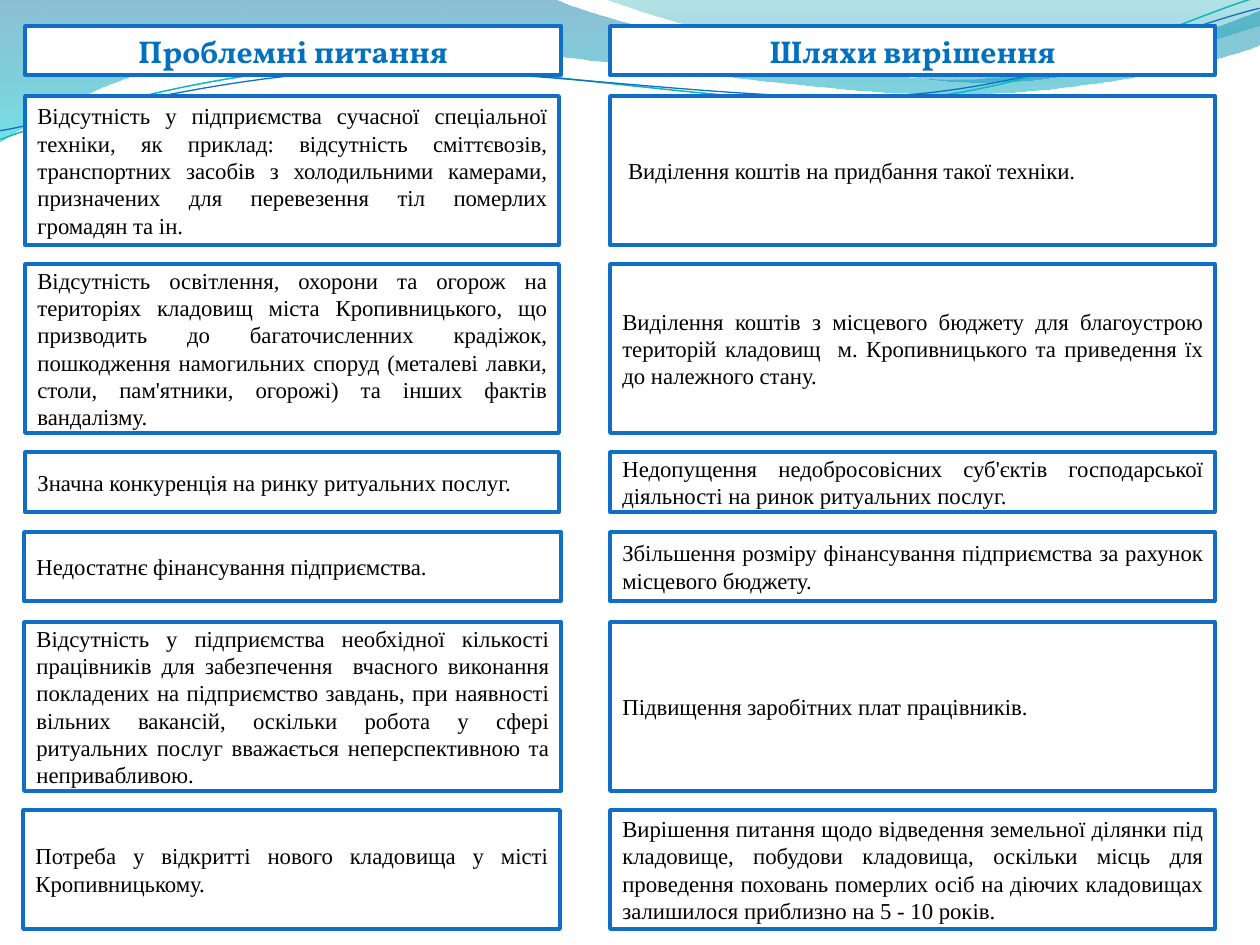
from lxml import etree
from pptx import Presentation
from pptx.dml.color import RGBColor
from pptx.enum.shapes import MSO_SHAPE as SHAPE
from pptx.enum.text import MSO_ANCHOR as ANCHOR, PP_ALIGN as ALIGN
from pptx.oxml.ns import qn
from pptx.util import Emu, Pt

SCALE = 914400 / 126
COLORS = {
    "white": "FFFFFF", "black": "000000", "blue": "0F6FC6", "heading": "0070C0",
    "teal": "0AB8BF", "wave_blue": "0074A1", "wave_cyan": "00C6CF",
    "wave_green": "00A1A9", "wave_sea": "008BBF",
}
SOLUTION_X, SOLUTION_W = 610, 605

# Top and height of the row, left and width of the problem box, problem, solution
ROWS = [
    (96, 149, 25, 534,
     "Відсутність у підприємства сучасної спеціальної техніки, як приклад: відсутність "
     "сміттєвозів, транспортних засобів з холодильними камерами, призначених для "
     "перевезення тіл померлих громадян та ін.",
     " Виділення коштів на придбання такої техніки."),
    (264, 169, 25, 534,
     "Відсутність освітлення, охорони та огорож на територіях кладовищ міста "
     "Кропивницького, що призводить до багаточисленних крадіжок, пошкодження "
     "намогильних споруд (металеві лавки, столи, пам'ятники, огорожі) та інших фактів "
     "вандалізму.",
     "Виділення коштів з місцевого бюджету для благоустрою територій кладовищ  "
     "м. Кропивницького та приведення їх до належного стану."),
    (452, 60, 25, 534,
     "Значна конкуренція на ринку ритуальних послуг.",
     "Недопущення недобросовісних суб'єктів господарської діяльності на ринок "
     "ритуальних послуг."),
    (532, 69, 24, 537,
     "Недостатнє фінансування підприємства.",
     "Збільшення розміру фінансування підприємства за рахунок місцевого бюджету."),
    (622, 169, 24, 537,
     "Відсутність у підприємства необхідної кількості працівників для забезпечення  "
     "вчасного виконання покладених на підприємство завдань, при наявності вільних "
     "вакансій, оскільки робота у сфері ритуальних послуг вважається неперспективною та "
     "непривабливою.",
     "Підвищення заробітних плат працівників."),
    (810, 119, 23, 537,
     "Потреба у відкритті нового кладовища у місті Кропивницькому.",
     "Вирішення питання щодо відведення земельної ділянки під кладовище, побудови "
     "кладовища, оскільки місць для проведення поховань померлих осіб на діючих "
     "кладовищах залишилося приблизно на 5 - 10 років."),
]


def px(n):
    return Emu(round(n * SCALE))


def color(name):
    return RGBColor.from_string(COLORS[name])


def add_text(sp, text, size=13, font="Times New Roman", fill="black", bold=False,
             align=ALIGN.JUSTIFY):
    tf = sp.text_frame
    tf.word_wrap = True
    tf.vertical_anchor = ANCHOR.MIDDLE
    p = tf.paragraphs[0]
    p.alignment = align
    r = p.add_run()
    r.text = text
    r.font.size, r.font.name, r.font.bold = Pt(size), font, bold
    r.font.color.rgb = color(fill)


def add_box(slide, x, y, w, h, text, **fmt):
    sp = slide.shapes.add_shape(SHAPE.RECTANGLE, px(x), px(y), px(w), px(h))
    sp.shadow.inherit = False
    sp.fill.solid()
    sp.fill.fore_color.rgb = color("white")
    sp.line.color.rgb = color("blue")
    sp.line.width = Pt(2)
    add_text(sp, text, **fmt)


def add_curve(slide, x, y, start, segments, close):
    """A segment of one point is straight, one of three points is a cubic curve."""
    points = [start] + [pt for seg in segments for pt in seg]
    points = [(px(x + a), px(y + b)) for a, b in points]
    builder = slide.shapes.build_freeform(*points[0])
    builder.add_line_segments(points[1:], close=close)
    sp = builder.convert_to_shape()
    sp.shadow.inherit = False
    # Join the three straight steps of each curve into one cubic segment
    steps = iter(list(sp.element.iter(qn("a:lnTo"))))
    for seg in segments:
        group = [next(steps) for _ in seg]
        if len(group) == 3:
            cubic = etree.Element(qn("a:cubicBezTo"))
            group[0].addprevious(cubic)
            for step in group:
                cubic.append(step[0])
                step.getparent().remove(step)
    return sp


def add_wave(slide, x, y, start, segments, stops):
    sp = add_curve(slide, x, y, start, segments, True)
    sp.line.fill.background()
    sp.fill.gradient()
    sp.fill.gradient_angle = 270
    for stop, (name, _) in zip(sp.fill.gradient_stops, stops):
        stop.color.rgb = color(name)
    gradient = sp.element.spPr.find(qn("a:gradFill"))
    for rgb, (_, opacity) in zip(gradient.iter(qn("a:srgbClr")), stops):
        etree.SubElement(rgb, qn("a:alpha")).set("val", str(opacity * 1000))


def add_wave_line(slide, x, y, start, segments, name, width):
    sp = add_curve(slide, x, y, start, segments, False)
    sp.rotation = 357.3
    sp.fill.background()
    sp.line.color.rgb = color(name)
    sp.line.width = Pt(width)


def add_backdrop(slide, x, y):
    # Translucent waves
    add_wave(slide, x, y, (0, 0), [
        [(554, -1)],
        [(600, 21), (837, 79), (955, 79)], [(1074, 79), (1207, 33), (1260, 11)],
        [(1261, 45)],
        [(1239, 55), (1096, 96), (940, 94)], [(784, 94), (481, 35), (324, 43)],
        [(163, 45), (58, 105), (-1, 142)],
    ], [("wave_blue", 45), ("wave_cyan", 55)])
    add_wave(slide, x, y, (604, -1), [
        [(641, 14), (859, 78), (969, 82)], [(1079, 87), (1211, 40), (1260, 26)],
        [(1260, 0)],
    ], [("wave_green", 30), ("wave_sea", 45)])
    # Thin lines, turned slightly
    add_wave_line(slide, x, y, (-2, 110), [
        [(59, 90), (200, 52), (350, 53)], [(499, 53), (745, 117), (896, 113)],
        [(1048, 109), (1184, 45), (1260, 27)],
    ], "teal", 0.85)
    add_wave_line(slide, x, y, (-2, 101), [
        [(58, 94), (208, 57), (358, 58)], [(509, 58), (751, 112), (902, 108)],
        [(1052, 104), (1188, 52), (1262, 38)],
    ], "blue", 0.75)


def add_header(slide, x, y, w, h, text):
    add_box(slide, x, y, w, h, text, size=18, font="Vollkorn", fill="heading",
            bold=True, align=ALIGN.CENTER)


def main():
    prs = Presentation()
    prs.slide_width, prs.slide_height = px(1260), px(945)
    slide = prs.slides.add_slide(prs.slide_layouts[6])
    add_backdrop(slide, 0, 0)
    # Column headings
    add_header(slide, 25, 26, 536, 49, "Проблемні питання")
    add_header(slide, SOLUTION_X, 26, SOLUTION_W, 49, "Шляхи вирішення")
    # Each problem beside its solution
    for y, h, x, w, problem, solution in ROWS:
        add_box(slide, x, y, w, h, problem)
        add_box(slide, SOLUTION_X, y, SOLUTION_W, h, solution)
    prs.save("out.pptx")


if __name__ == "__main__":
    main()
